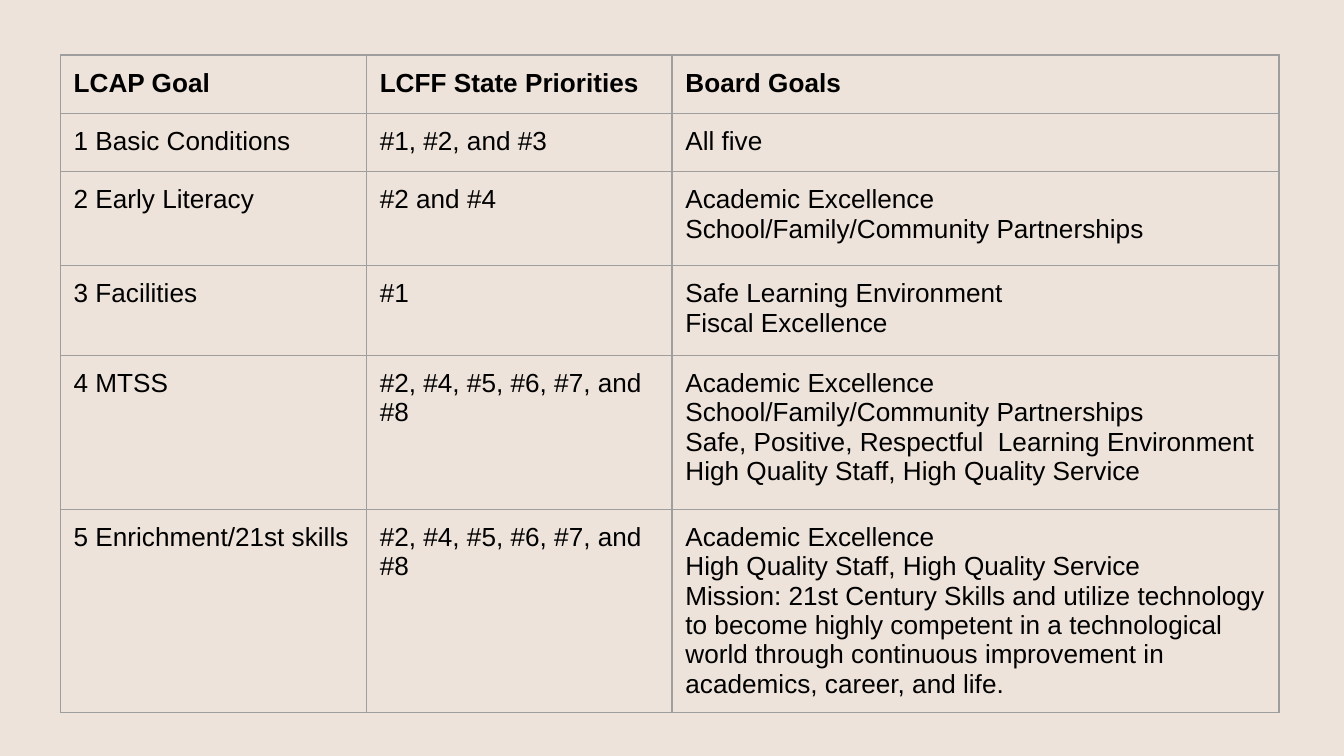
"""Build a slide with a table that aligns LCAP goals, state priorities and board goals."""
from lxml.etree import SubElement
from pptx import Presentation
from pptx.dml.color import RGBColor
from pptx.oxml.ns import qn
from pptx.util import Pt


def color(hex_value):
    return RGBColor.from_string(hex_value)


goals = [
    ("LCAP Goal", "LCFF State Priorities", "Board Goals"),
    ("1 Basic Conditions", "#1, #2, and #3", "All five"),
    ("2 Early Literacy", "#2 and #4",
     "Academic Excellence\nSchool/Family/Community Partnerships"),
    ("3 Facilities", "#1", "Safe Learning Environment\nFiscal Excellence"),
    ("4 MTSS", "#2, #4, #5, #6, #7, and #8",
     "Academic Excellence\nSchool/Family/Community Partnerships\n"
     "Safe, Positive, Respectful  Learning Environment\n"
     "High Quality Staff, High Quality Service"),
    ("5 Enrichment/21st skills", "#2, #4, #5, #6, #7, and #8",
     "Academic Excellence\nHigh Quality Staff, High Quality Service\n"
     "Mission: 21st Century Skills and utilize technology to become highly "
     "competent in a technological world through continuous improvement in "
     "academics, career, and life."),
]
column_widths = [164, 163.75, 325.25]
row_heights = [31.2, 31.2, 50.4, 48, 82.5, 31.2]
margin_format = {f"margin_{side}": Pt(7.2) for side in ("left", "right", "top", "bottom")}
font_format = {"name": "Arial", "size": Pt(14)}

deck = Presentation()
deck.slide_width, deck.slide_height = Pt(720), Pt(405)
slide = deck.slides.add_slide(deck.slide_layouts[6])
slide.background.fill.solid()
slide.background.fill.fore_color.rgb = color("EDE3DA")

alignment = slide.shapes.add_table(
    len(goals), len(column_widths), Pt(32.25), Pt(29.5),
    Pt(sum(column_widths)), Pt(sum(row_heights))).table
alignment.first_row = alignment.horz_banding = False
for column, width in zip(alignment.columns, column_widths):
    column.width = Pt(width)
for row, height in zip(alignment.rows, row_heights):
    row.height = Pt(height)

for row_number, entries in enumerate(goals):
    for column_number, entry in enumerate(entries):
        cell = alignment.cell(row_number, column_number)
        cell.text = entry
        for key, value in margin_format.items():
            setattr(cell, key, value)
        for paragraph in cell.text_frame.paragraphs:
            font = paragraph.runs[0].font
            for key, value in font_format.items():
                setattr(font, key, value)
            font.bold = row_number == 0
            font.color.rgb = color("000000")
        properties = cell._tc.get_or_add_tcPr()
        for edge in ("lnL", "lnR", "lnT", "lnB"):
            border = SubElement(properties, qn(f"a:{edge}"), w=str(Pt(0.75)))
            border_fill = SubElement(border, qn("a:solidFill"))
            SubElement(border_fill, qn("a:srgbClr"), val="9E9E9E")
        cell.fill.background()

deck.save("out.pptx")
